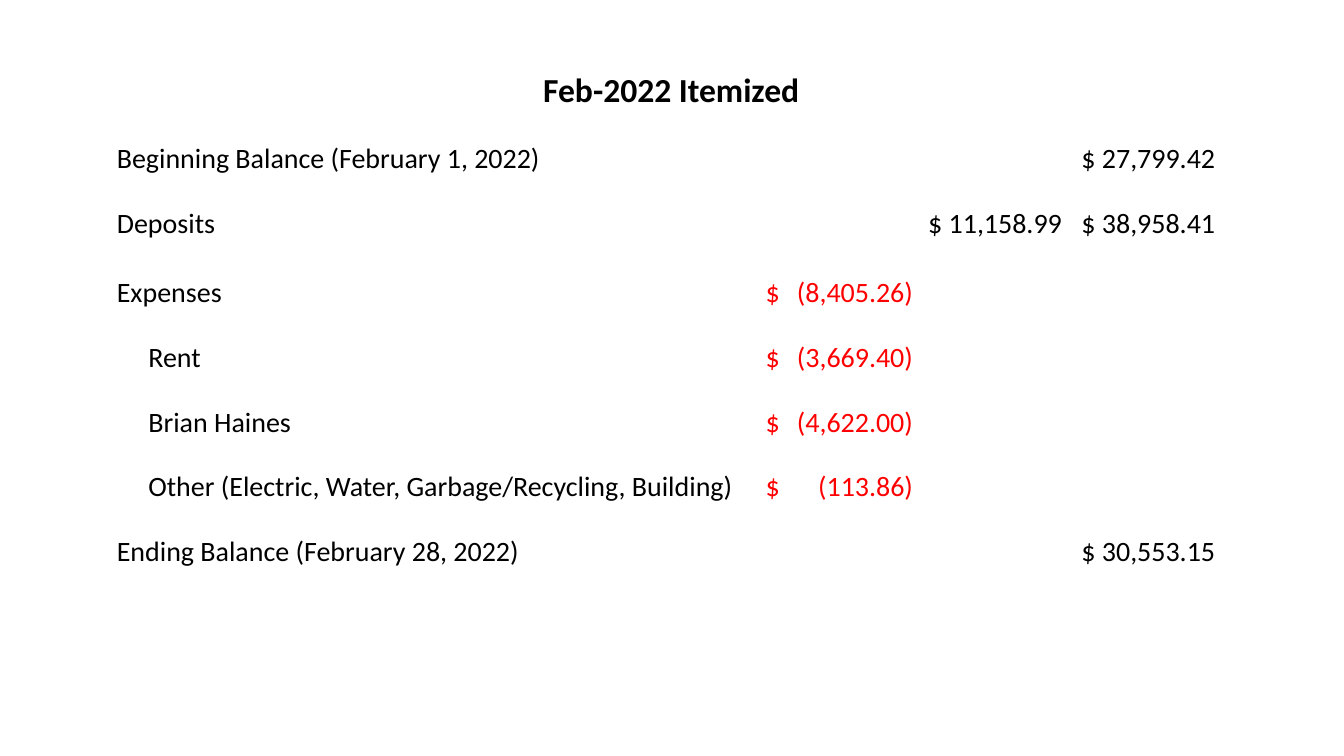
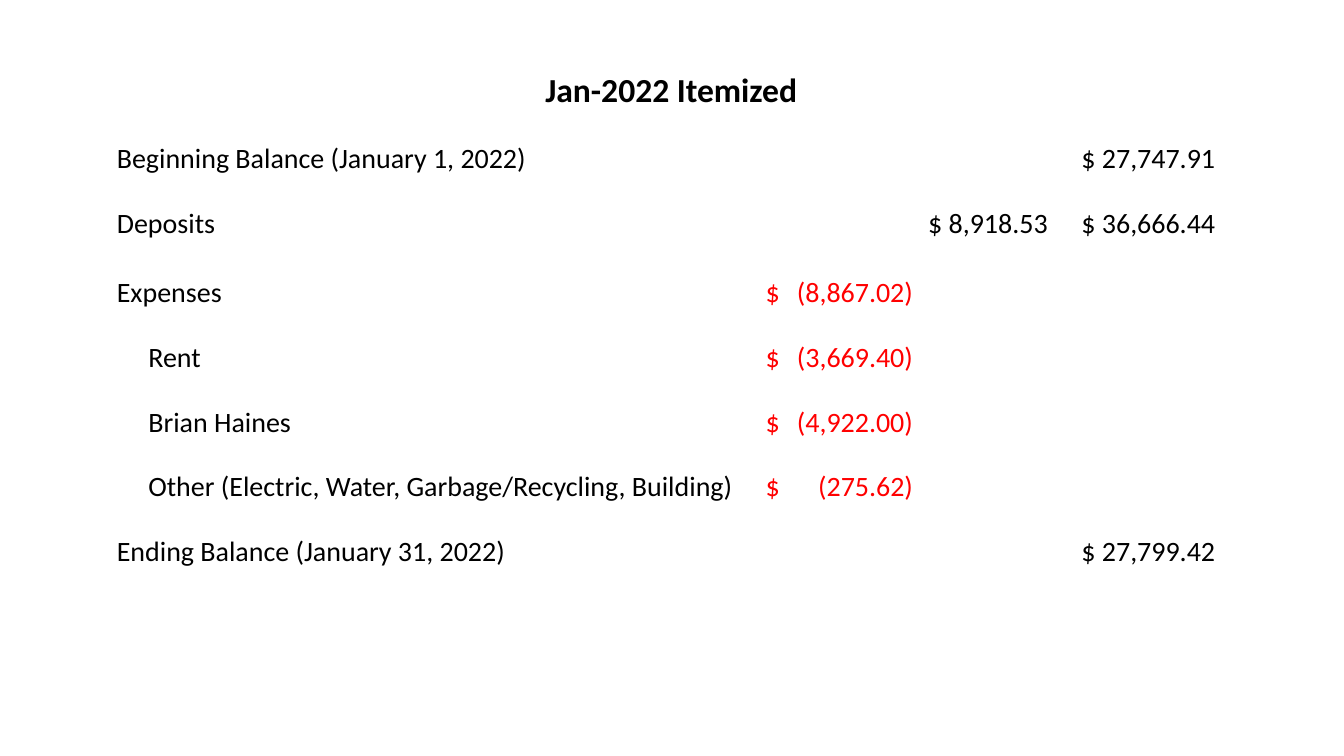
from dataclasses import dataclass

from lxml import etree
from pptx import Presentation
from pptx.dml.color import RGBColor
from pptx.enum import text
from pptx.oxml import ns
from pptx.util import Pt


@dataclass(frozen=True)
class Theme:
    font: str = "Calibri"
    ink: str = "000000"
    expense: str = "FF0000"
    title_size: float = 18
    body_size: float = 15
    line_spacing: float = 0.87


THEME = Theme()
SLIDE_SIZE = (720, 405)
TABLE_LEFT, TABLE_TOP = 61.9, 18
COLUMN_WIDTHS = (344.2, 87.1, 82.1, 82.1)
ROW_HEIGHTS = (41, 34.7, 34.7, 36.9, 34.7, 34.7, 34.7, 34.7)
CELL_MARGIN = 0.7
AMOUNT_INDENT = 4.1
ITEM_INDENT = 17.6
EXPENSE_TAB = 79
LABEL, EXPENSE, DEPOSIT, BALANCE = range(4)

MONTHS = (
    {
        "title": "Feb-2022 Itemized",
        "first_day": "February 1, 2022",
        "last_day": "February 28, 2022",
        "opening": 27799.42,
        "deposits": 11158.99,
        "expenses": (3669.40, 4622.00, 113.86),
    },
    {
        "title": "Jan-2022 Itemized",
        "first_day": "January 1, 2022",
        "last_day": "January 31, 2022",
        "opening": 27747.91,
        "deposits": 8918.53,
        "expenses": (3669.40, 4922.00, 275.62),
    },
)
EXPENSE_ITEMS = (
    "Rent",
    "Brian Haines",
    "Other (Electric, Water, Garbage/Recycling, Building)",
)


def apply_format(target, values):
    for name, value in values.items():
        setattr(target, name, value)


def add_right_tab(paragraph, position):
    properties = paragraph._p.get_or_add_pPr()
    tabs = etree.SubElement(properties, ns.qn("a:tabLst"))
    etree.SubElement(tabs, ns.qn("a:tab"), pos=str(Pt(position)), algn="r")


def write_cell(cell, content, indent=CELL_MARGIN, color=THEME.ink,
               size=THEME.body_size, bold=False, align=text.PP_ALIGN.LEFT):
    cell.text = content
    paragraph = cell.text_frame.paragraphs[0]
    apply_format(paragraph, {"alignment": align, "line_spacing": THEME.line_spacing})
    apply_format(paragraph.font, {"name": THEME.font, "size": Pt(size), "bold": bold})
    for run in paragraph.runs:
        apply_format(run.font, {"name": THEME.font, "size": Pt(size), "bold": bold})
        run.font.color.rgb = RGBColor.from_string(color)
    cell.margin_left = Pt(indent)
    return paragraph


def write_amount(cell, amount):
    write_cell(cell, f"$ {amount:,.2f}", AMOUNT_INDENT)


def write_expense(cell, amount):
    """Write a negative amount with its sign at the left and figures at the right."""
    paragraph = write_cell(cell, f"$\t({amount:,.2f})", AMOUNT_INDENT, THEME.expense)
    add_right_tab(paragraph, EXPENSE_TAB)


def add_ledger_table(slide):
    frame = slide.shapes.add_table(
        len(ROW_HEIGHTS), len(COLUMN_WIDTHS), Pt(TABLE_LEFT), Pt(TABLE_TOP),
        Pt(sum(COLUMN_WIDTHS)), Pt(sum(ROW_HEIGHTS)))
    table = frame.table
    apply_format(table, {"first_row": False, "horz_banding": False})
    for column, width in zip(table.columns, COLUMN_WIDTHS):
        column.width = Pt(width)
    for row, height in zip(table.rows, ROW_HEIGHTS):
        row.height = Pt(height)
    for cell in table.iter_cells():
        cell.fill.background()
        apply_format(cell, {
            "vertical_anchor": text.MSO_ANCHOR.BOTTOM,
            "margin_left": Pt(CELL_MARGIN),
            "margin_right": Pt(CELL_MARGIN),
            "margin_top": Pt(CELL_MARGIN),
            "margin_bottom": Pt(0),
        })
    return table


def add_month_slide(presentation, month):
    slide = presentation.slides.add_slide(presentation.slide_layouts[6])
    table = add_ledger_table(slide)
    spent = sum(month["expenses"])
    available = month["opening"] + month["deposits"]

    table.cell(0, LABEL).merge(table.cell(0, BALANCE))
    write_cell(table.cell(0, LABEL), month["title"], size=THEME.title_size,
               bold=True, align=text.PP_ALIGN.CENTER)

    labels = (
        f"Beginning Balance ({month['first_day']})",
        "Deposits",
        "Expenses",
        *EXPENSE_ITEMS,
        f"Ending Balance ({month['last_day']})",
    )
    for row, label in enumerate(labels, start=1):
        indent = ITEM_INDENT if label in EXPENSE_ITEMS else CELL_MARGIN
        write_cell(table.cell(row, LABEL), label, indent)

    write_amount(table.cell(2, DEPOSIT), month["deposits"])
    balances = {1: month["opening"], 2: available, 7: available - spent}
    for row, balance in balances.items():
        write_amount(table.cell(row, BALANCE), balance)
    for row, amount in enumerate((spent, *month["expenses"]), start=3):
        write_expense(table.cell(row, EXPENSE), amount)


def main():
    presentation = Presentation()
    presentation.slide_width, presentation.slide_height = map(Pt, SLIDE_SIZE)
    for month in MONTHS:
        add_month_slide(presentation, month)
    presentation.save("out.pptx")


if __name__ == "__main__":
    main()
